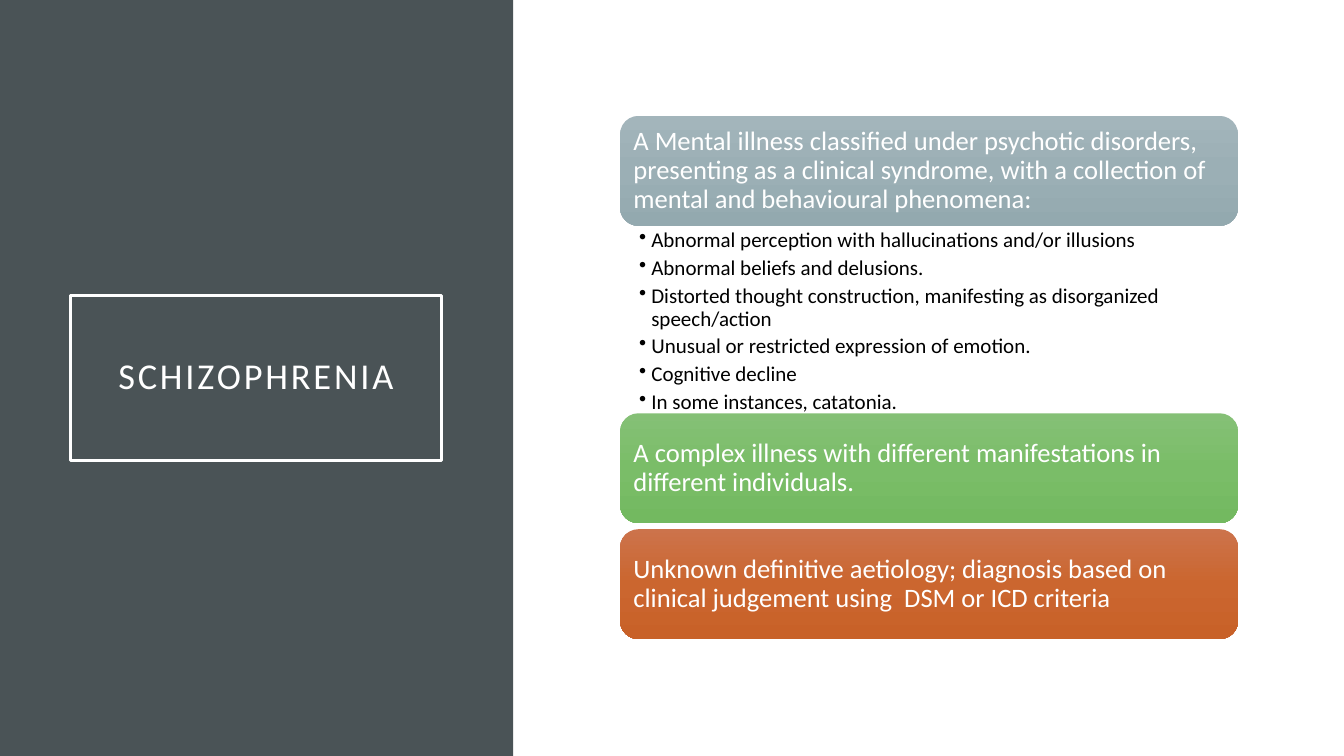
import copy
import pptx
import pptx.dml.color
import pptx.enum.shapes
import pptx.enum.text
import pptx.oxml
import pptx.oxml.ns
import pptx.util

Inches = pptx.util.Inches
Pt = pptx.util.Pt
Kind = pptx.enum.shapes.MSO_SHAPE
Align = pptx.enum.text.PP_ALIGN
Anchor = pptx.enum.text.MSO_ANCHOR
qn = pptx.oxml.ns.qn

hues = {
    "panel": "4A5356",
    "white": "FFFFFF",
    "black": "000000",
    "slate": ["A3B5BB", "9BAFB5", "93A9AF"],
    "green": ["85C076", "7ABD68", "73B960"],
    "rust": ["CC734B", "CB662F", "C86128"],
}


def rgb(hue):
    return pptx.dml.color.RGBColor.from_string(hue)


def write(shape, lines, size, hue, pads, anchor, align, after=0):
    frame = shape.text_frame
    left, top, right, base = map(Inches, pads)
    form = {"word_wrap": True, "vertical_anchor": anchor, "margin_left": left,
            "margin_top": top, "margin_right": right, "margin_bottom": base}
    for name, value in form.items():
        setattr(frame, name, value)
    frame.text = "\n".join(lines)
    for para in frame.paragraphs:
        form = {"alignment": align, "line_spacing": 0.9, "space_after": Pt(after)}
        for name, value in form.items():
            setattr(para, name, value)
        font = para.runs[0].font
        for name, value in {"name": "Calibri", "size": Pt(size)}.items():
            setattr(font, name, value)
        font.color.rgb = rgb(hues[hue])


deck = pptx.Presentation()
deck.slide_width = Inches(13.33)
deck.slide_height = Inches(7.5)
slide = deck.slides.add_slide(deck.slide_layouts[6])
shapes = slide.shapes

panel = shapes.add_shape(Kind.RECTANGLE, 0, 0, Inches(5.09), Inches(7.5))
panel.shadow.inherit = False
panel.fill.solid()
panel.fill.fore_color.rgb = rgb(hues["panel"])
panel.line.fill.background()

title = shapes.add_shape(Kind.RECTANGLE, Inches(0.7), Inches(2.93), Inches(3.68), Inches(1.64))
title.shadow.inherit = False
title.fill.background()
title.line.color.rgb = rgb(hues["white"])
title.line.width = Pt(2.5)
write(title, ["SCHIZOPHRENIA"], 26, "white", [0.2] * 4, Anchor.MIDDLE, Align.CENTER)
title.text_frame.paragraphs[0].runs[0].font._element.set("spc", "200")

left, width = Inches(6.15), Inches(6.13)
cards = [
    (1.15, "slate", "A Mental illness classified under psychotic disorders, presenting as a clinical syndrome, with a collection of  mental and behavioural phenomena:"),
    (4.1, "green", "A complex illness with different manifestations in different individuals."),
    (5.25, "rust", "Unknown definitive aetiology; diagnosis based on clinical judgement using  DSM or ICD criteria"),
]
for top, hue, text in cards:
    card = shapes.add_shape(Kind.ROUNDED_RECTANGLE, left, Inches(top), width, Inches(1.09))
    card.shadow.inherit = False
    card.line.fill.background()
    card.fill.gradient()
    card.fill.gradient_angle = 270
    stops = next(card._element.iter(qn("a:gsLst")))
    stops.append(copy.deepcopy(stops[-1]))
    for stop, place, shade in zip(card.fill.gradient_stops, [0, 0.5, 1], hues[hue]):
        stop.position = place
        stop.color.rgb = rgb(shade)
    write(card, [text], 19, "white", [0.08] * 4, Anchor.MIDDLE, Align.LEFT)

signs = [
    "Abnormal perception with hallucinations and/or illusions",
    "Abnormal beliefs and delusions.",
    "Distorted thought construction, manifesting as disorganized speech/action",
    "Unusual or restricted expression of emotion.",
    "Cognitive decline",
    "In some instances, catatonia.",
]
box = shapes.add_textbox(left, Inches(2.25), width, Inches(1.85))
write(box, signs, 15, "black", [0.19, 0.03, 0.15, 0.03], Anchor.TOP, Align.LEFT, 3.6)
for para in box.text_frame.paragraphs:
    props = para._p.get_or_add_pPr()
    props.set("marL", str(Inches(0.12)))
    props.set("indent", str(-Inches(0.12)))
    mark = pptx.oxml.parse_xml(
        '<a:buChar xmlns:a="http://schemas.openxmlformats.org/drawingml/2006/main" char="•"/>')
    props.append(mark)

deck.save("out.pptx")
